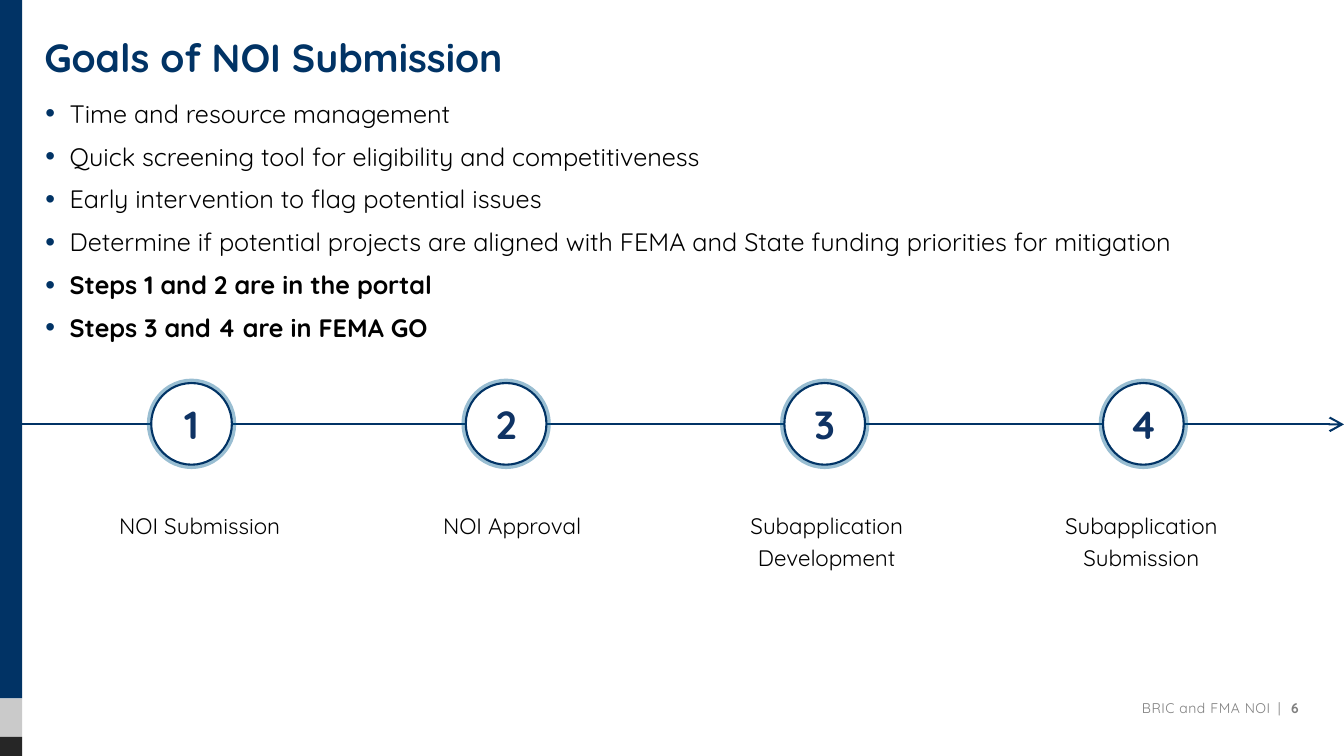
from pptx import Presentation, util as u
from pptx.dml.color import RGBColor
from pptx.enum import shapes, text
from pptx.oxml import parse_xml
from pptx.oxml.ns import nsdecls

NAVY = RGBColor(0x01, 0x33, 0x65)
NUMBER_NAVY = RGBColor(0x0F, 0x33, 0x64)
LIGHT_GRAY = RGBColor(0xCA, 0xCA, 0xCA)
FOOTER_GRAY = RGBColor(0x7F, 0x7F, 0x7F)
CHARCOAL = RGBColor(0x26, 0x26, 0x26)
BLACK = RGBColor(0, 0, 0)
WHITE = RGBColor(0xFF, 0xFF, 0xFF)


def set_frame(shape, anchor):
    frame = shape.text_frame
    frame.word_wrap = True
    frame.auto_size = text.MSO_AUTO_SIZE.NONE
    frame.vertical_anchor = anchor
    frame.margin_left = frame.margin_right = 0
    frame.margin_top = frame.margin_bottom = u.Inches(0.05)
    return frame


def add_run(paragraph, words, size, color, bold=False):
    run = paragraph.add_run()
    run.text = words
    run.font.name = "Quicksand"
    run.font.size = u.Pt(size)
    run.font.color.rgb = color
    run.font.bold = bold
    return run


presentation = Presentation()
presentation.slide_width = u.Inches(13.33)
presentation.slide_height = u.Inches(7.5)
slide = presentation.slides.add_slide(presentation.slide_layouts[1])

# Side bar
for top, height, color in [(0, 6.93, NAVY), (6.93, 0.38, LIGHT_GRAY), (7.31, 0.19, CHARCOAL)]:
    bar = slide.shapes.add_shape(shapes.MSO_SHAPE.RECTANGLE, 0, u.Inches(top),
                                 u.Inches(0.22), u.Inches(height))
    bar.shadow.inherit = False
    bar.fill.solid()
    bar.fill.fore_color.rgb = color
    bar.line.fill.background()

# Title
title = slide.shapes.title
title.left, title.top = u.Inches(0.44), u.Inches(0.28)
title.width, title.height = u.Inches(12.43), u.Inches(0.84)
paragraph = set_frame(title, text.MSO_ANCHOR.TOP).paragraphs[0]
paragraph.alignment = text.PP_ALIGN.LEFT
add_run(paragraph, "Goals of NOI Submission", 28, NAVY, True)

# Goals list
goals = [
    ("Time and resource management", False),
    ("Quick screening tool for eligibility and competitiveness", False),
    ("Early intervention to flag potential issues", False),
    ("Determine if potential projects are aligned with FEMA and State funding "
     "priorities for mitigation", False),
    ("Steps 1 and 2 are in the portal", True),
    ("Steps 3 and 4 are in FEMA GO", True),
]
body = slide.placeholders[1]
body.left, body.top = u.Inches(0.44), u.Inches(0.88)
body.width, body.height = u.Inches(12.43), u.Inches(5.49)
frame = set_frame(body, text.MSO_ANCHOR.TOP)
for index, (goal, bold) in enumerate(goals):
    paragraph = frame.add_paragraph() if index else frame.paragraphs[0]
    properties = paragraph._p.get_or_add_pPr()
    properties.set("marL", str(u.Inches(0.25)))
    properties.set("indent", str(u.Inches(-0.24)))
    for bullet in (f'<a:buClr {nsdecls("a")}><a:srgbClr val="{NAVY}"/></a:buClr>',
                   f'<a:buSzPct {nsdecls("a")} val="110000"/>',
                   f'<a:buFont {nsdecls("a")} typeface="Arial"/>',
                   f'<a:buChar {nsdecls("a")} char="•"/>'):
        properties.append(parse_xml(bullet))
    paragraph.alignment = text.PP_ALIGN.LEFT
    paragraph.line_spacing = 1.14
    paragraph.space_before = u.Pt(3 if index else 0)
    paragraph.space_after = u.Pt(3)
    add_run(paragraph, goal, 18, BLACK, bold)

# Step names
steps = ["NOI Submission", "NOI Approval", "Subapplication Development",
         "Subapplication Submission"]
table = slide.shapes.add_table(1, len(steps), u.Inches(0.44), u.Inches(4.89),
                               u.Inches(12.44), u.Inches(0.97)).table
table.first_row = table.horz_banding = False
for index, step in enumerate(steps):
    table.columns[index].width = u.Inches(3.12 if index else 3.08)
    cell = table.cell(0, index)
    cell.fill.background()
    cell.margin_left = cell.margin_right = u.Inches(0.2)
    cell.margin_top = cell.margin_bottom = u.Inches(0.15)
    paragraph = cell.text_frame.paragraphs[0]
    paragraph.alignment = text.PP_ALIGN.CENTER
    paragraph.line_spacing = 1.14
    paragraph.space_after = u.Pt(3)
    add_run(paragraph, step, 16, BLACK)

# Timeline arrow
timeline = slide.shapes.add_connector(shapes.MSO_CONNECTOR.STRAIGHT, 0, u.Inches(4.21),
                                      u.Inches(13.33), u.Inches(4.21))
timeline.line.color.rgb = NAVY
timeline.line.width = u.Pt(1.5)
timeline.line._get_or_add_ln().append(
    parse_xml(f'<a:tailEnd {nsdecls("a")} type="arrow" w="lg" len="lg"/>'))
timeline._element.spPr.append(parse_xml(f'<a:effectLst {nsdecls("a")}/>'))

# Numbered circles with a pale halo
for number, left in enumerate([1.5, 4.62, 7.78, 10.94], start=1):
    circle = slide.shapes.add_shape(shapes.MSO_SHAPE.OVAL, u.Inches(left), u.Inches(3.8),
                                    u.Inches(0.8), u.Inches(0.81))
    circle.fill.solid()
    circle.fill.fore_color.rgb = WHITE
    circle.line.color.rgb = NAVY
    circle.line.width = u.Pt(1.5)
    circle._element.spPr.append(parse_xml(
        f'<a:effectLst {nsdecls("a")}><a:outerShdw blurRad="0" dist="0" dir="0" '
        'sx="108000" sy="108000" algn="ctr" rotWithShape="0"><a:srgbClr val="005D90">'
        '<a:alpha val="40000"/></a:srgbClr></a:outerShdw></a:effectLst>'))
    paragraph = set_frame(circle, text.MSO_ANCHOR.MIDDLE).paragraphs[0]
    paragraph.alignment = text.PP_ALIGN.CENTER
    add_run(paragraph, str(number), 28, NUMBER_NAVY, True)

# Footer, with wider letter spacing around the divider
footer = slide.shapes.add_textbox(u.Inches(4.79), u.Inches(6.88), u.Inches(8.09), u.Inches(0.29))
paragraph = set_frame(footer, text.MSO_ANCHOR.MIDDLE).paragraphs[0]
paragraph.alignment = text.PP_ALIGN.RIGHT
for words, spacing, bold in [("BRIC and FMA NOI", 40, False), (" | ", 230, False), ("6", 40, True)]:
    run = add_run(paragraph, words, 10, FOOTER_GRAY, bold)
    run.font._element.set("spc", str(spacing))

presentation.save("out.pptx")
